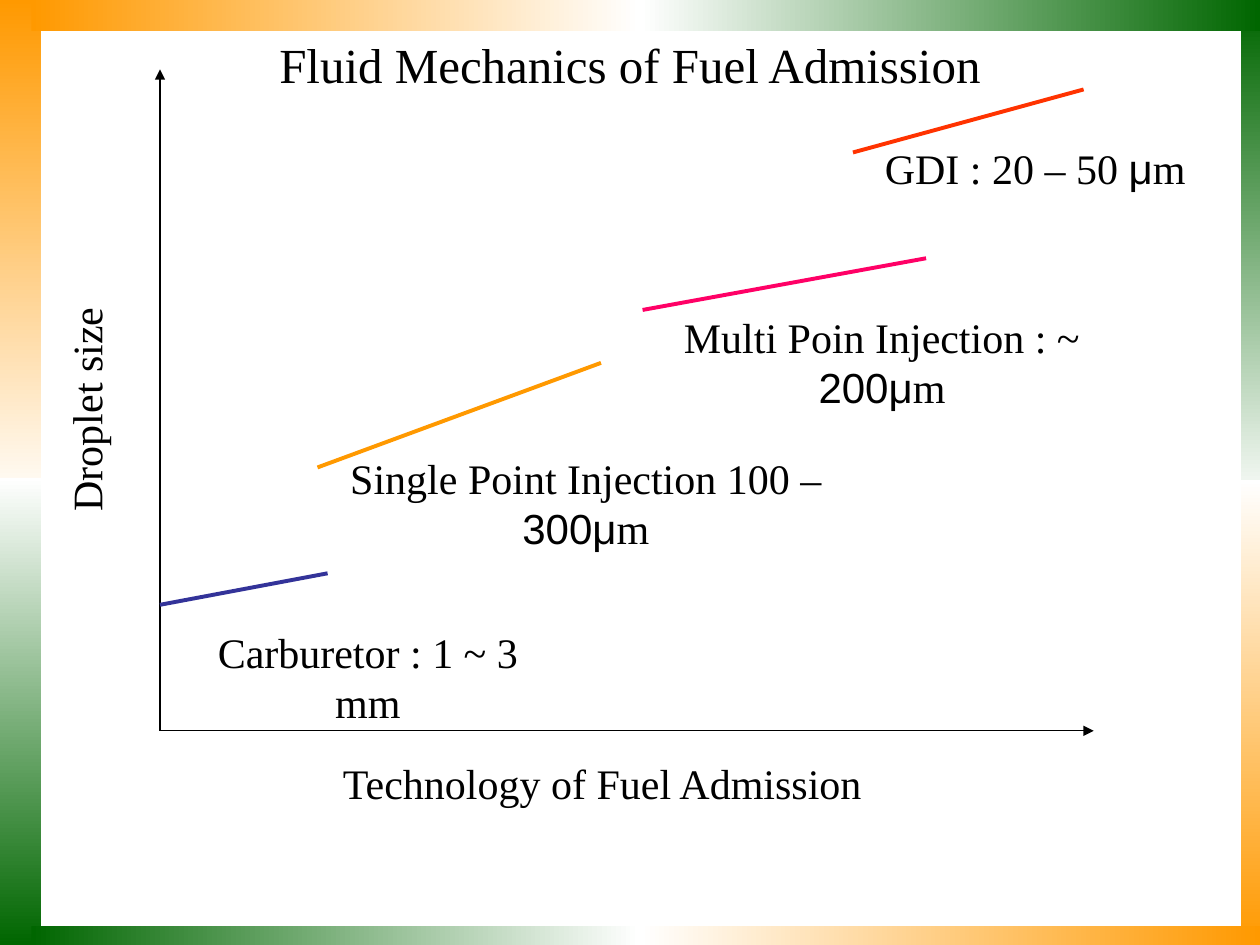
from lxml import etree
from pptx import Presentation
from pptx.dml.color import RGBColor
from pptx.enum.shapes import MSO_CONNECTOR, MSO_SHAPE
from pptx.enum.text import MSO_ANCHOR, PP_ALIGN
from pptx.oxml.ns import qn
from pptx.util import Inches, Pt

STRAIGHT = MSO_CONNECTOR.STRAIGHT
RECTANGLE = MSO_SHAPE.RECTANGLE
CENTER = PP_ALIGN.CENTER
TOP, MIDDLE = MSO_ANCHOR.TOP, MSO_ANCHOR.MIDDLE

SERIF, SANS = "Times New Roman", "Arial"
COLORS = {
    "black": "000000", "white": "FFFFFF", "orange": "FF9900",
    "green": "006600", "blue": "333399", "pink": "FF0066", "red": "FF3300",
}


def rgb(name):
    return RGBColor.from_string(COLORS[name])


def add_label(shapes, box, runs, size=24, anchor=TOP, wrap=False, side=0.1, rotation=0):
    """Centred text in box; runs are (text, font name) pairs."""
    label = shapes.add_textbox(*map(Inches, box))
    label.rotation = rotation
    frame_format = {
        "word_wrap": wrap, "vertical_anchor": anchor,
        "margin_left": Inches(side), "margin_right": Inches(side),
    }
    for name, value in frame_format.items():
        setattr(label.text_frame, name, value)
    paragraph = label.text_frame.paragraphs[0]
    paragraph.alignment = CENTER
    for text, font_name in runs:
        run = paragraph.add_run()
        run.text = text
        for name, value in {"name": font_name, "size": Pt(size)}.items():
            setattr(run.font, name, value)
        run.font.color.rgb = rgb("black")


def add_line(shapes, start, end, color, width, arrow=False):
    line = shapes.add_connector(STRAIGHT, *map(Inches, (*start, *end)))
    line.line.color.rgb = rgb(color)
    line.line.width = Pt(width)
    if arrow:
        outline = line.line._get_or_add_ln()
        etree.SubElement(outline, qn("a:tailEnd"), type="triangle")
    etree.SubElement(line._element.spPr, qn("a:effectLst"))


def add_axes(slide, box):
    """Both axes start at the lower left corner of box."""
    left, top, width, height = box
    origin = (left, top + height)
    for end in ((left + width, top + height), (left, top)):
        add_line(slide.shapes, origin, end, "black", 0.75, arrow=True)
    add_label(slide.shapes, (left - 1.5, top + 2.45, 1.82, 0.5),
              [("Droplet size", SERIF)], rotation=270)
    add_label(slide.shapes, (left + 1.33, top + height + 0.16, 4.36, 0.5),
              [("Technology of Fuel Admission", SERIF)])


def add_technology(slide, start, rise, color, label_box, runs, wrap=False):
    """One droplet size line grouped with its label; label_box is relative to start."""
    group = slide.shapes.add_group_shape()
    left, top = start
    add_line(group.shapes, start, (left + rise[0], top - rise[1]), color, 2.25)
    offset_x, offset_y, width, height = label_box
    add_label(group.shapes, (left + offset_x, top + offset_y, width, height), runs,
              wrap=wrap, side=0.05 if wrap else 0.1)


def add_band(shapes, box, first, last, vertical):
    band = shapes.add_shape(RECTANGLE, *map(Inches, box))
    band.shadow.inherit = False
    band.line.fill.background()
    band.fill.gradient()
    band.fill.gradient_angle = 270 if vertical else 0
    for stop, color in zip(band.fill.gradient_stops, (first, last)):
        stop.color.rgb = rgb(color)


def add_border(slide, box):
    """Gradient bands on all four sides, each fading through white."""
    left, top, width, height = box
    right, bottom = left + width, top + height
    shapes = slide.shapes.add_group_shape().shapes
    # Left and right sides: x, top, width, end of upper half, start of lower half
    sides = [
        (left, top, 0.33, 4.04, 3.79, "orange", "green"),
        (right - 0.15, top + 0.04, 0.15, 4.06, 3.81, "green", "orange"),
    ]
    for x, y, thickness, upper_end, lower_start, first, last in sides:
        add_band(shapes, (x, y, thickness, top + upper_end - y), first, "white", True)
        add_band(shapes, (x, top + lower_start, thickness, height - lower_start),
                 "white", last, True)
    # Top and bottom edges
    start, middle = left + 0.25, left + 5.08
    edges = [(top, 0.25, "orange", "green"), (bottom - 0.15, 0.15, "green", "orange")]
    for y, thickness, first, last in edges:
        add_band(shapes, (start, y, middle - start, thickness), first, "white", False)
        add_band(shapes, (middle, y, right - middle, thickness), "white", last, False)


def main():
    presentation = Presentation()
    presentation.slide_width, presentation.slide_height = Inches(10), Inches(7.5)
    slide = presentation.slides.add_slide(presentation.slide_layouts[6])

    # Title and axes
    add_label(slide.shapes, (0.75, 0.17, 8.5, 0.67),
              [("Fluid Mechanics of Fuel Admission", SERIF)],
              size=28, anchor=MIDDLE, wrap=True)
    add_axes(slide, (1.27, 0.55, 7.41, 5.25))

    # Technologies: start, rise, colour, label box, runs, wrapping
    technologies = [
        ((1.27, 4.8), (1.33, 0.25), "blue", (0.06, 0.12, 3.18, 0.5),
         [("Carburetor : 1 ~ 3 mm", SERIF)], False),
        ((2.52, 3.71), (2.25, 0.83), "orange", (0.16, -0.17, 3.94, 0.9),
         [("Single Point Injection 100 –", SERIF), (" 300μ", SANS), ("m", SERIF)], True),
        ((5.1, 2.46), (2.25, 0.41), "pink", (0.23, -0.04, 3.34, 0.9),
         [("Multi Poin Injection : ~", SERIF), (" 200μ", SANS), ("m", SERIF)], True),
        ((6.77, 1.21), (1.83, 0.5), "red", (0.15, -0.13, 2.59, 0.5),
         [("GDI : 20 – 50 ", SERIF), ("μ", SANS), ("m", SERIF)], False),
    ]
    for technology in technologies:
        add_technology(slide, *technology)

    # Border
    add_border(slide, (0, 0, 10, 7.5))
    presentation.save("out.pptx")


if __name__ == "__main__":
    main()
